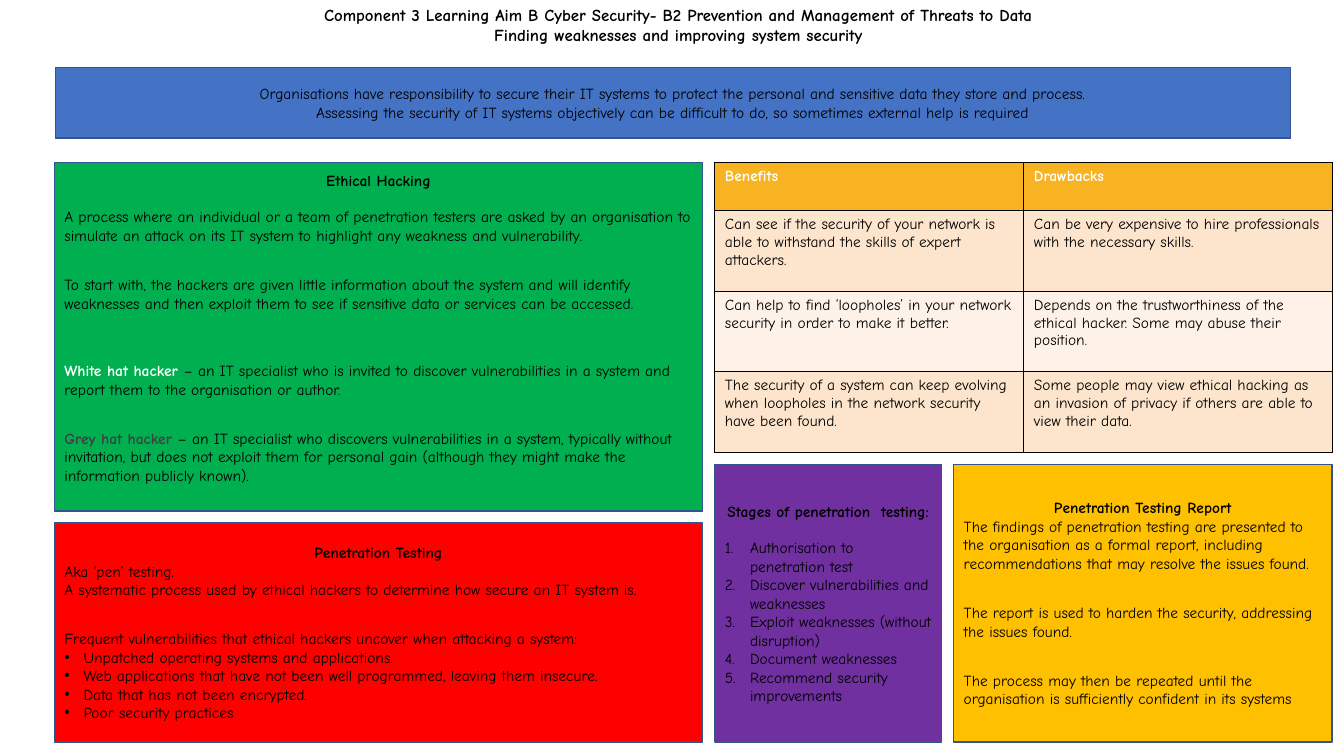
from dataclasses import dataclass

from lxml.etree import SubElement
from pptx import Presentation
from pptx.dml.color import RGBColor
from pptx.enum.shapes import MSO_SHAPE
from pptx.enum.text import MSO_ANCHOR, MSO_AUTO_SIZE, PP_ALIGN
from pptx.oxml.ns import qn
from pptx.util import Inches, Pt

BLACK = RGBColor(0x00, 0x00, 0x00)
WHITE = RGBColor(0xFF, 0xFF, 0xFF)
GREY = RGBColor(0x40, 0x40, 0x40)
BLUE = RGBColor(0x44, 0x72, 0xC4)
OUTLINE = RGBColor(0x32, 0x54, 0x91)
GREEN = RGBColor(0x00, 0xB0, 0x50)
RED = RGBColor(0xFF, 0x00, 0x00)
GOLD = RGBColor(0xFF, 0xC0, 0x00)
PURPLE = RGBColor(0x70, 0x30, 0xA0)
HEADER = RGBColor(0xF8, 0xB3, 0x23)
BANDS = [RGBColor(0xFE, 0xF2, 0xE8), RGBColor(0xFC, 0xE5, 0xCC)]

LEFT_COLUMN, LEFT_WIDTH = 0.54, 6.43
RIGHT_COLUMN = 7.09
LINE_GAP, BREAK_GAP = 13, 22


@dataclass
class Para:
    text: str
    gap: int = 0
    align: PP_ALIGN = PP_ALIGN.LEFT
    bold: bool = False
    color: RGBColor = BLACK
    lead: str = ""
    lead_color: RGBColor = BLACK
    marker: str = ""
    indent: float = 0


def heading(text):
    return Para(text, align=PP_ALIGN.CENTER, bold=True)


def apply(target, values):
    for name, value in values.items():
        setattr(target, name, value)


class Poster:
    font_name = "Comic Neue"
    body_size = 11

    def __init__(self, slide):
        self.slide = slide

    def add_text(self, frame, paras, size=body_size):
        for index, para in enumerate(paras):
            line = frame.add_paragraph() if index else frame.paragraphs[0]
            apply(line, {"alignment": para.align, "space_before": Pt(para.gap)})
            if para.marker:
                self.mark(line, para)
            pieces = [(para.lead, True, para.lead_color),
                      (para.text, para.bold, para.color)]
            for text, bold, color in pieces:
                if text:
                    run = line.add_run()
                    run.text = text
                    apply(run.font, {"name": self.font_name, "size": Pt(size), "bold": bold})
                    run.font.color.rgb = color

    def mark(self, line, para):
        props = line._p.get_or_add_pPr()
        props.set("marL", str(Inches(para.indent)))
        props.set("indent", str(-Inches(para.indent)))
        if para.marker == "1.":
            SubElement(props, qn("a:buFont"), typeface="+mj-lt")
            SubElement(props, qn("a:buAutoNum"), type="arabicPeriod")
        else:
            SubElement(props, qn("a:buFont"), typeface="Arial")
            SubElement(props, qn("a:buChar"), char=para.marker)

    def title(self, at, paras):
        frame = self.slide.shapes.add_textbox(*map(Inches, at)).text_frame
        apply(frame, {"word_wrap": True, "vertical_anchor": MSO_ANCHOR.MIDDLE,
                      "auto_size": MSO_AUTO_SIZE.SHAPE_TO_FIT_TEXT})
        self.add_text(frame, paras, 12)

    def box(self, at, fill, paras, bottom=0.05):
        panel = self.slide.shapes.add_shape(MSO_SHAPE.RECTANGLE, *map(Inches, at))
        panel.shadow.inherit = False
        panel.fill.solid()
        panel.fill.fore_color.rgb = fill
        panel.line.color.rgb = OUTLINE
        panel.line.width = Pt(1)
        apply(panel.text_frame, {"word_wrap": True, "vertical_anchor": MSO_ANCHOR.MIDDLE,
                                 "margin_bottom": Inches(bottom)})
        self.add_text(panel.text_frame, paras)

    def table(self, at, row_heights, rows):
        grid = self.slide.shapes.add_table(len(rows), len(rows[0]), *map(Inches, at)).table
        apply(grid, {"first_row": True, "horz_banding": False})
        for column in grid.columns:
            column.width = Inches(at[2] / len(rows[0]))
        for r, texts in enumerate(rows):
            grid.rows[r].height = Inches(row_heights[r])
            for c, text in enumerate(texts):
                cell = grid.cell(r, c)
                self.border(cell)
                cell.fill.solid()
                cell.fill.fore_color.rgb = BANDS[r % 2] if r else HEADER
                self.add_text(cell.text_frame,
                              [Para(text, bold=r == 0, color=BLACK if r else WHITE)])

    def border(self, cell):
        props = cell._tc.get_or_add_tcPr()
        for side in ("lnL", "lnR", "lnT", "lnB"):
            edge = SubElement(props, qn(f"a:{side}"), w=str(Pt(0.75)))
            paint = SubElement(edge, qn("a:solidFill"))
            SubElement(paint, qn("a:srgbClr"), val=str(BLACK))


def main():
    deck = Presentation()
    deck.slide_width, deck.slide_height = Inches(13.33), Inches(7.5)
    poster = Poster(deck.slides.add_slide(deck.slide_layouts[6]))

    poster.title((0.13, 0, 13.2, 0.5), [
        heading("Component 3 Learning Aim B Cyber Security- B2 Prevention and Management of Threats to Data"),
        heading("Finding weaknesses and improving system security"),
    ])
    poster.box((0.55, 0.67, 12.25, 0.7), BLUE, [
        Para(text, align=PP_ALIGN.CENTER) for text in (
            "Organisations have responsibility to secure their IT systems to protect the personal and sensitive data they store and process.",
            "Assessing the security of IT systems objectively can be difficult to do, so sometimes external help is required",
        )
    ])
    poster.box((LEFT_COLUMN, 1.61, LEFT_WIDTH, 3.46), GREEN, [
        heading("Ethical Hacking"),
        Para("A process where an individual or a team of penetration testers are asked by an organisation to simulate an attack on its IT system to highlight any weakness and vulnerability.", LINE_GAP),
        Para("To start with, the hackers are given little information about the system and will identify weaknesses and then exploit them to see if sensitive data or services can be accessed.", BREAK_GAP),
        Para("– an IT specialist who is invited to discover vulnerabilities in a system and report them to the organisation or author.",
             BREAK_GAP + LINE_GAP, lead="White hat hacker ", lead_color=WHITE),
        Para("– an IT specialist who discovers vulnerabilities in a system, typically without invitation, but does not exploit them for personal gain (although they might make the information publicly known).",
             BREAK_GAP, lead="Grey hat hacker ", lead_color=GREY),
    ], bottom=0.23)
    poster.table((RIGHT_COLUMN, 1.61, 6.13, 2.87), [0.48, 0.8, 0.8, 0.8], [
        ("Benefits", "Drawbacks"),
        ("Can see if the security of your network is able to withstand the skills of expert attackers.",
         "Can be very expensive to hire professionals with the necessary skills."),
        ("Can help to find ‘loopholes’ in your network security in order to make it better.",
         "Depends on the trustworthiness of the ethical hacker. Some may abuse their position."),
        ("The security of a system can keep evolving when loopholes in the network security have been found.",
         "Some people may view ethical hacking as an invasion of privacy if others are able to view their data."),
    ])
    vulnerabilities = (
        "Unpatched operating systems and applications.",
        "Web applications that have not been well programmed, leaving them insecure.",
        "Data that has not been encrypted.",
        "Poor security practices",
    )
    poster.box((LEFT_COLUMN, 5.19, LEFT_WIDTH, 2.17), RED, [
        heading("Penetration Testing"),
        Para("Aka ‘pen’ testing."),
        Para("A systematic process used by ethical hackers to determine how secure an IT system is."),
        Para("Frequent vulnerabilities that ethical hackers uncover when attacking a system:", BREAK_GAP),
        *(Para(text, marker="•", indent=0.19) for text in vulnerabilities),
    ])
    poster.box((9.46, 4.61, 3.75, 2.75), GOLD, [
        heading("Penetration Testing Report"),
        Para("The findings of penetration testing are presented to the organisation as a formal report, including recommendations that may resolve the issues found."),
        Para("The report is used to harden the security, addressing the issues found.", BREAK_GAP),
        Para("The process may then be repeated until the organisation is sufficiently confident in its systems", BREAK_GAP),
    ])
    stages = (
        "Authorisation to penetration test",
        "Discover vulnerabilities and weaknesses",
        "Exploit weaknesses (without disruption)",
        "Document weaknesses",
        "Recommend security improvements",
    )
    poster.box((RIGHT_COLUMN, 4.61, 2.25, 2.75), PURPLE, [
        heading("Stages of penetration  testing:"),
        *(Para(text, 0 if index else LINE_GAP, marker="1.", indent=0.25)
          for index, text in enumerate(stages)),
    ])
    deck.save("out.pptx")


if __name__ == "__main__":
    main()
